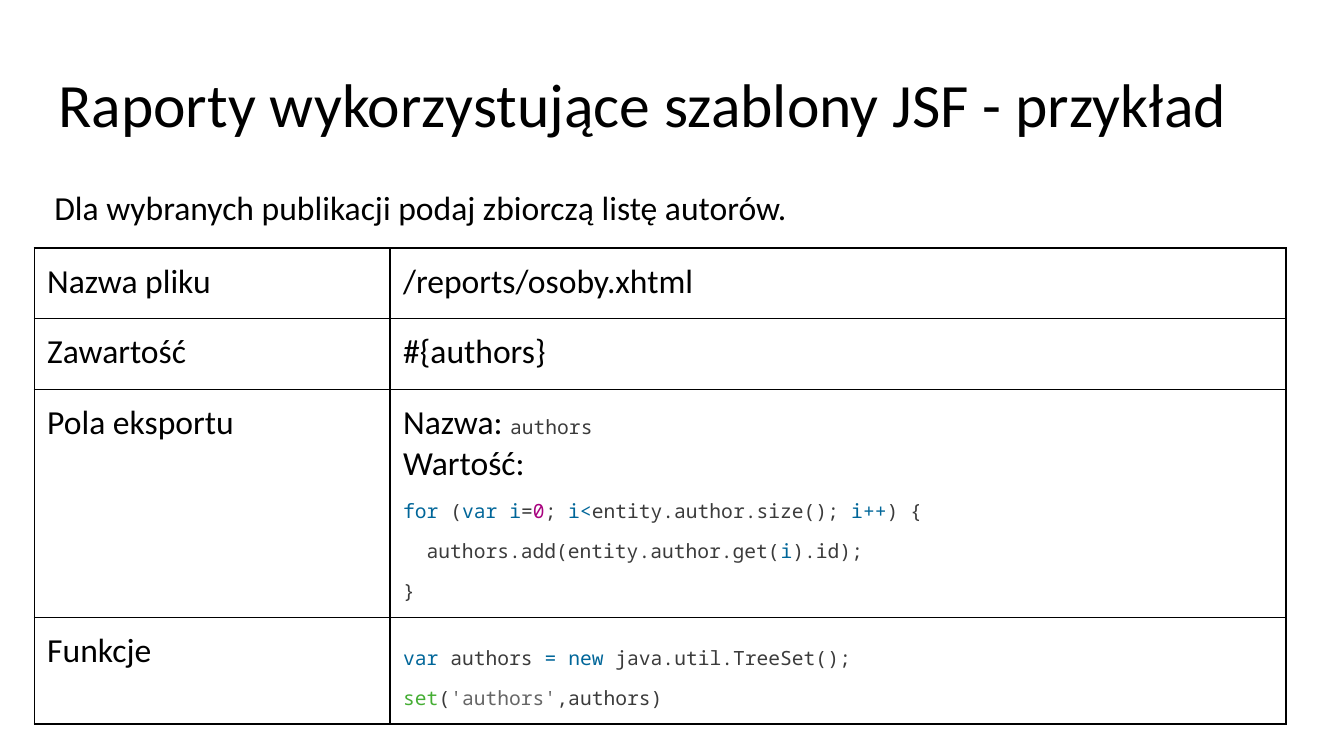
from lxml.etree import SubElement
from pptx import Presentation
from pptx.dml.color import RGBColor
from pptx.enum.text import MSO_ANCHOR, MSO_AUTO_SIZE, PP_ALIGN
from pptx.oxml.ns import qn
from pptx.util import Cm, Pt

BLACK = RGBColor(0x00, 0x00, 0x00)
DARK = RGBColor(0x3B, 0x3B, 0x3B)
BLUE = RGBColor(0x00, 0x66, 0x99)
MAGENTA = RGBColor(0xA8, 0x01, 0x7E)
GREEN = RGBColor(0x45, 0xAE, 0x34)
GRAY = RGBColor(0x66, 0x66, 0x66)

LOOP_CODE = [
    [("for", BLUE), (" (", DARK), ("var", BLUE), (" ", DARK), ("i", BLUE), ("=", DARK),
     ("0", MAGENTA), ("; ", DARK), ("i<", BLUE), ("entity.author.size(); ", DARK),
     ("i++", BLUE), (") {", DARK)],
    [("  authors.add(entity.author.get(", DARK), ("i", BLUE), (").id);", DARK)],
    [("}", DARK)],
]
FUNCTION_CODE = [
    [("var", BLUE), (" authors ", DARK), ("=", BLUE), (" ", DARK), ("new", BLUE),
     (" java.util.TreeSet();", DARK)],
    [("set", GREEN), ("(", DARK), ("'authors'", GRAY), (",authors)", DARK)],
]


class ReportSlide:
    text_font = "Calibri"
    code_font = "Noto Sans Mono"
    text_size = Pt(24)
    code_size = Pt(14)
    inset = Cm(0.33)

    def __init__(self, deck):
        self.page = deck.slides.add_slide(deck.slide_layouts[5])

    def style(self, font, name, size, color=None):
        font.name = name
        font.size = size
        if color is not None:
            font.color.rgb = color

    def pad(self, target):
        target.margin_left = target.margin_right = self.inset
        target.margin_top = target.margin_bottom = self.inset

    def plain(self, para, text):
        para.text = text
        self.style(para.font, self.text_font, self.text_size, BLACK)

    def code(self, para, lines):
        para.line_spacing = 1.5
        self.style(para.font, self.code_font, self.code_size)
        for number, line in enumerate(lines):
            if number:
                para.add_line_break()
            for text, color in line:
                span = para.add_run()
                span.text = text
                self.style(span.font, self.code_font, self.code_size, color)

    def title(self, text, left, top, width, height):
        box = self.page.shapes.title
        box.left, box.top, box.width, box.height = left, top, width, height
        frame = box.text_frame
        self.pad(frame)
        frame.auto_size = MSO_AUTO_SIZE.NONE
        frame.vertical_anchor = MSO_ANCHOR.MIDDLE
        para = frame.paragraphs[0]
        para.text = text
        para.alignment = PP_ALIGN.LEFT
        para.line_spacing = 0.9
        self.style(para.font, self.text_font, Pt(44), BLACK)

    def text(self, text, left, top, width, height):
        frame = self.page.shapes.add_textbox(left, top, width, height).text_frame
        frame.word_wrap = True
        self.pad(frame)
        self.plain(frame.paragraphs[0], text)

    def table(self, left, top, widths, heights):
        table = self.page.shapes.add_table(
            len(heights), len(widths), left, top, sum(widths), sum(heights)).table
        table.first_row = table.horz_banding = False
        for column, width in zip(table.columns, widths):
            column.width = width
        for row, height in zip(table.rows, heights):
            row.height = height
        for cell in table.iter_cells():
            self.pad(cell)
            self.border(cell)
            cell.fill.background()
        return table

    def border(self, cell):
        properties = cell._tc.get_or_add_tcPr()
        for side in ("a:lnL", "a:lnR", "a:lnT", "a:lnB"):
            line = SubElement(properties, qn(side), w=str(Pt(1)))
            fill = SubElement(line, qn("a:solidFill"))
            SubElement(fill, qn("a:srgbClr"), val=str(BLACK))


def main():
    deck = Presentation()
    deck.slide_width, deck.slide_height = Cm(33.87), Cm(19.05)
    slide = ReportSlide(deck)
    slide.title("Raporty wykorzystujące szablony JSF - przykład",
                Cm(1.14), Cm(1.65), Cm(31.55), Cm(2.13))
    table = slide.table(Cm(0.86), Cm(6.25), [Cm(8.97), Cm(22.58)],
                        [Cm(1.78), Cm(1.78), Cm(5.28), Cm(2.36)])

    labels = ["Nazwa pliku", "Zawartość", "Pola eksportu", "Funkcje"]
    for row, label in enumerate(labels):
        slide.plain(table.cell(row, 0).text_frame.paragraphs[0], label)
    for row, value in enumerate(["/reports/osoby.xhtml", "#{authors}"]):
        slide.plain(table.cell(row, 1).text_frame.paragraphs[0], value)

    fields = table.cell(2, 1).text_frame
    name = fields.paragraphs[0]
    slide.plain(name, "Nazwa: ")
    span = name.add_run()
    span.text = "authors"
    slide.style(span.font, slide.code_font, slide.code_size, DARK)
    slide.plain(fields.add_paragraph(), "Wartość:")
    slide.code(fields.add_paragraph(), LOOP_CODE)
    slide.code(table.cell(3, 1).text_frame.paragraphs[0], FUNCTION_CODE)

    slide.text("Dla wybranych publikacji podaj zbiorczą listę autorów.",
               Cm(1.04), Cm(4.37), Cm(23.83), Cm(1.35))
    deck.save("out.pptx")


if __name__ == "__main__":
    main()
